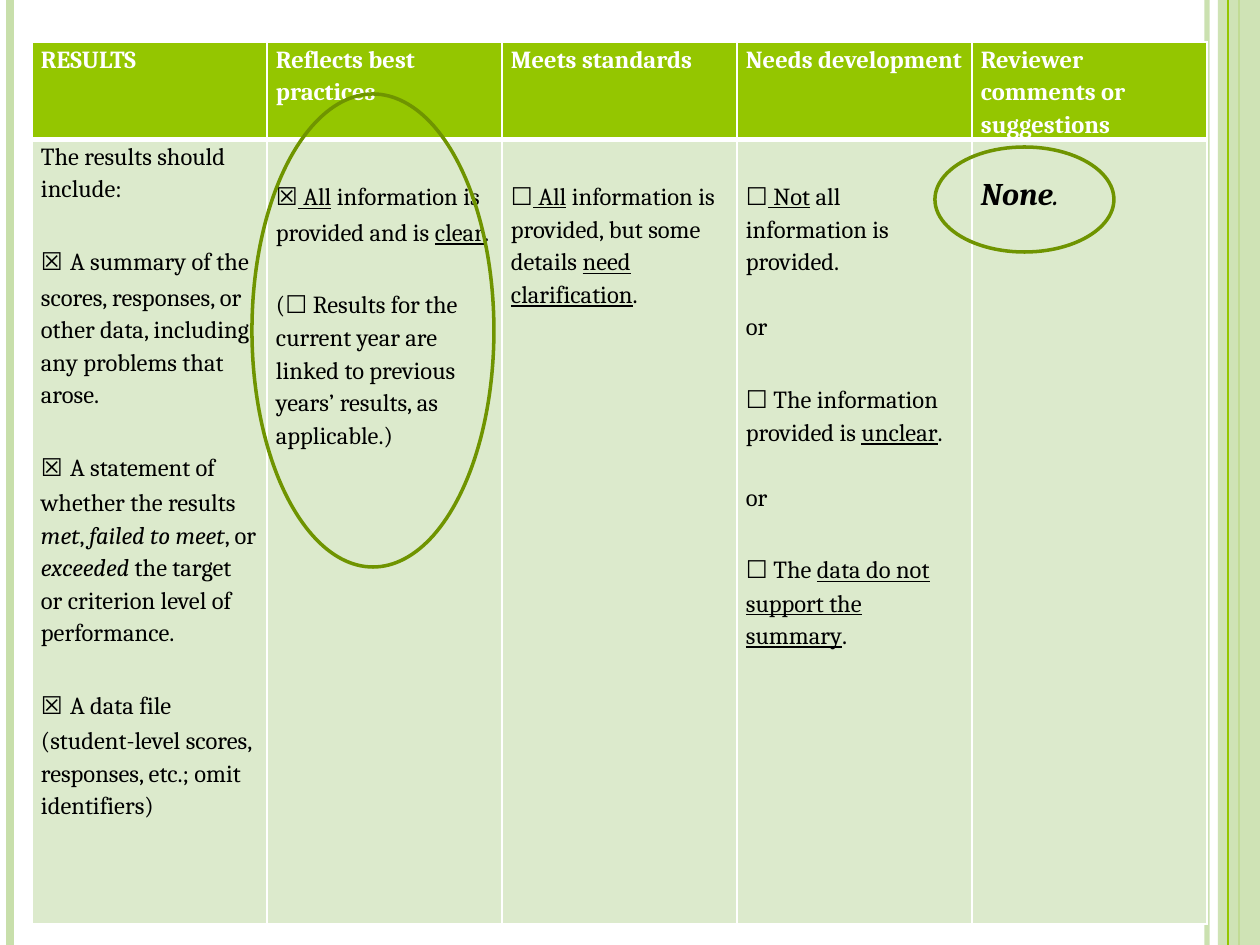
from dataclasses import dataclass

from lxml.etree import SubElement
from pptx import Presentation
from pptx.dml.color import RGBColor
from pptx.enum.shapes import MSO_CONNECTOR, MSO_SHAPE
from pptx.enum.text import MSO_ANCHOR
from pptx.oxml import parse_xml
from pptx.oxml.ns import nsdecls, qn
from pptx.util import Emu, Pt

PX = 914400 // 126
SLIDE_W, SLIDE_H = 1260, 945


@dataclass(frozen=True)
class Theme:
    green: str = "94C600"
    dark_green: str = "6F9400"
    pale_green: str = "C8DFAB"
    cell: str = "DCEACC"
    white: str = "FFFFFF"
    black: str = "000000"
    font: str = "Cambria"
    checked_font: str = "TeX Gyre Schola"
    box_font: str = "Noto Sans CJK JP"
    text: float = 14
    comment: float = 18
    gap: float = 18.5
    leading: float = 1.15


T = Theme()

HEADERS = ["RESULTS", "Reflects best practices", "Meets standards",
           "Needs development", "Reviewer comments or suggestions"]
CRITERIA = [
    [
        [("The results should include:", "")],
        [("☒ ", "b"), ("A summary of the scores, responses, or other data, "
                       "including any problems that arose.", "")],
        [("☒ ", "b"), ("A statement of whether the results ", ""), ("met", "i"),
         (", ", ""), ("failed to meet", "i"), (", or ", ""), ("exceeded", "i"),
         (" the target or criterion level of performance.", "")],
        [("☒ ", "b"), ("A data file (student-level scores, responses, etc.; "
                       "omit identifiers)", "")],
    ],
    [
        [("☒", "b"), (" All", "u"), (" information is provided and is ", ""),
         ("clear", "u"), (".", "")],
        [("(", ""), ("☐", ""), (" Results for the current year are linked to "
                                "previous years’ results, as applicable.)", "")],
    ],
    [
        [("☐", ""), (" All", "u"), (" information is provided, but some details ", ""),
         ("need clarification", "u"), (".", "")],
    ],
    [
        [("☐", ""), (" Not", "u"), (" all information is provided.", "")],
        [("or", "")],
        [("☐", ""), (" The information provided is ", ""), ("unclear", "u"), (".", "")],
        [("or", "")],
        [("☐", ""), (" The ", ""), ("data do not support the summary", "u"), (".", "")],
    ],
    [
        [("None", "bi"), (".", "i")],
    ],
]
TOP_MARGINS = [0, 32, 32, 32, 32]
SIZES = [T.text] * 4 + [T.comment]
TABLE_LEFT, TABLE_TOP, COL_W = 32, 42, 235
ROW_HEIGHTS = [97, 785]

RULES = [(1207, T.pale_green, 3, 93), (10, T.pale_green, 4.5, 100),
         (1239, T.green, 1.5, 100)]
BAND = (1218, 0, 42, SLIDE_H)
BAND_RULE = (1228, T.green, 0.75, 100)
CIRCLES = [(252, 94, 242, 473), (935, 147, 179, 105)]


def px(n):
    return Emu(n * PX)


def rgb(value):
    return RGBColor.from_string(value)


def set_alpha(properties, percent):
    color = next(properties.iter(qn("a:srgbClr")))
    SubElement(color, qn("a:alpha"), val=str(percent * 1000))


def add_rule(s, x, color, width, alpha):
    line = s.shapes.add_connector(MSO_CONNECTOR.STRAIGHT, px(x), 0, px(x), px(SLIDE_H))
    line.line.color.rgb = rgb(color)
    line.line.width = Pt(width)
    props = line._element.spPr
    set_alpha(props, alpha)
    SubElement(props, qn("a:effectLst"))


def add_band(s):
    sp = s.shapes.add_shape(MSO_SHAPE.RECTANGLE, *map(px, BAND))
    sp.shadow.inherit = False
    sp.fill.solid()
    sp.fill.fore_color.rgb = rgb(T.pale_green)
    sp.line.fill.background()
    set_alpha(sp._element.spPr, 87)


def add_circle(s, box):
    sp = s.shapes.add_shape(MSO_SHAPE.OVAL, *map(px, box))
    sp.shadow.inherit = False
    sp.fill.background()
    sp.line.color.rgb = rgb(T.dark_green)
    sp.line.width = Pt(2)


def add_run(p, text, style, size, color):
    r = p.add_run()
    r.text = text
    f = r.font
    f.size, f.color.rgb = Pt(size), rgb(color)
    f.bold, f.italic, f.underline = "b" in style, "i" in style, "u" in style
    symbol = {"☒": T.checked_font, "☐": T.box_font}.get(text[0])
    f.name = symbol or T.font
    if symbol:
        SubElement(r._r.get_or_add_rPr(), qn("a:ea"), typeface=symbol)


def set_borders(cell, top, bottom):
    props = cell._tc.get_or_add_tcPr()
    for i, (side, width) in enumerate([("L", 1), ("R", 1), ("T", top), ("B", bottom)]):
        props.insert(i, parse_xml(
            f'<a:ln{side} {nsdecls("a")} w="{Pt(width)}"><a:solidFill>'
            f'<a:srgbClr val="{T.white}"/></a:solidFill></a:ln{side}>'))


def fill_cell(cell, paragraphs, fill, color, size, top_margin):
    cell.fill.solid()
    cell.fill.fore_color.rgb = rgb(fill)
    cell.vertical_anchor = MSO_ANCHOR.TOP
    cell.margin_left = cell.margin_right = px(9)
    cell.margin_top, cell.margin_bottom = px(top_margin), 0
    tf = cell.text_frame
    for i, runs in enumerate(paragraphs):
        p = tf.add_paragraph() if i else tf.paragraphs[0]
        p.line_spacing = T.leading
        p.space_before = Pt(T.gap if i else 0)
        for text, style in runs:
            add_run(p, text, style, size, color)


def add_rubric(s):
    table = s.shapes.add_table(
        len(ROW_HEIGHTS), len(HEADERS), px(TABLE_LEFT), px(TABLE_TOP),
        px(COL_W * len(HEADERS)), px(sum(ROW_HEIGHTS))).table
    for row, height in zip(table.rows, ROW_HEIGHTS):
        row.height = px(height)
    columns = zip(HEADERS, CRITERIA, SIZES, TOP_MARGINS)
    for c, (header, paragraphs, size, margin) in enumerate(columns):
        table.columns[c].width = px(COL_W)
        head, body = table.cell(0, c), table.cell(1, c)
        fill_cell(head, [[(header, "b")]], T.green, T.white, T.text, 0)
        fill_cell(body, paragraphs, T.cell, T.black, size, margin)
        set_borders(head, 1, 3)
        set_borders(body, 3, 1)


def main():
    prs = Presentation()
    prs.slide_width, prs.slide_height = px(SLIDE_W), px(SLIDE_H)
    s = prs.slides.add_slide(prs.slide_layouts[6])
    for rule in RULES:
        add_rule(s, *rule)
    add_band(s)
    add_rule(s, *BAND_RULE)
    add_rubric(s)
    for box in CIRCLES:
        add_circle(s, box)
    prs.save("out.pptx")


if __name__ == "__main__":
    main()
